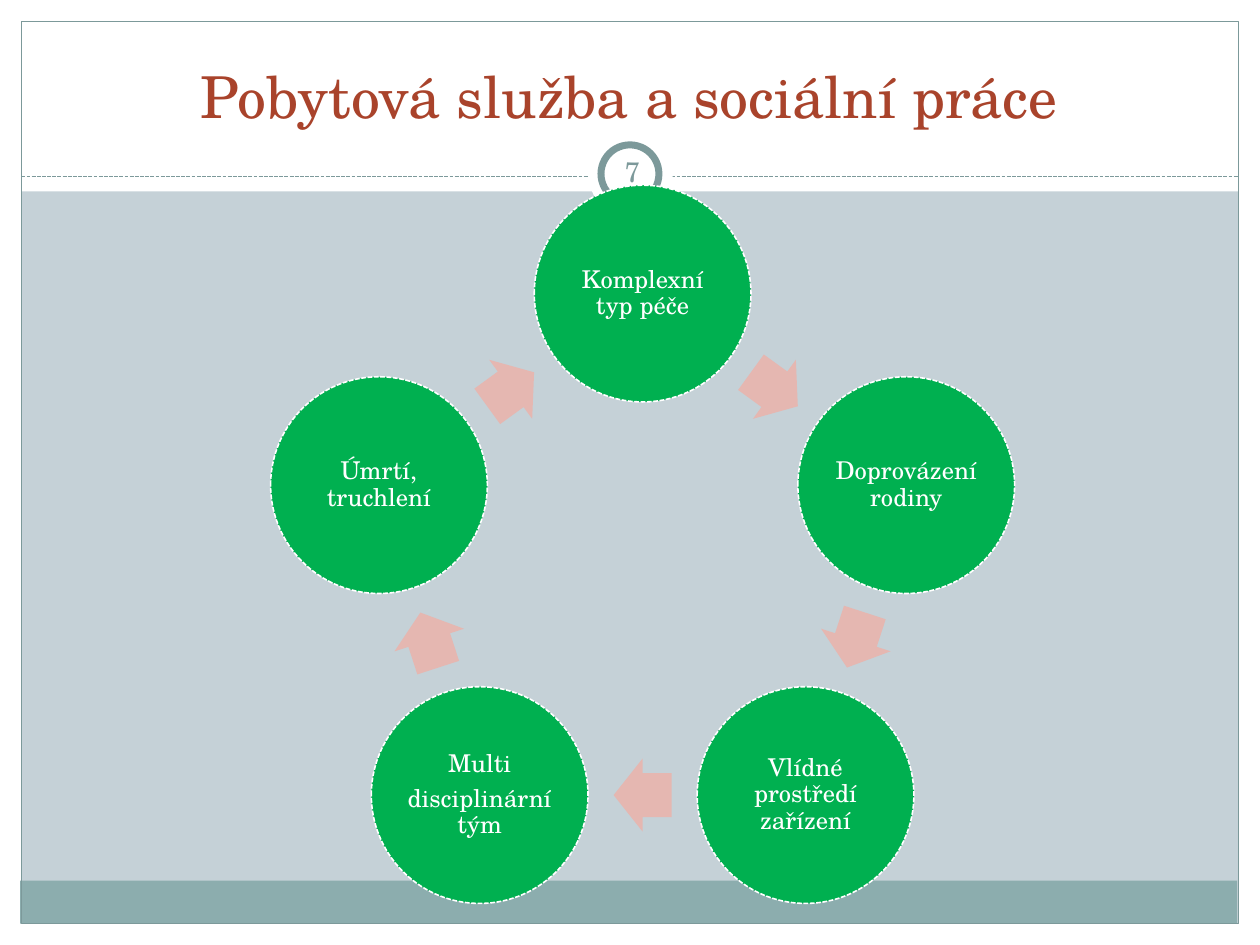
from math import cos, radians, sin
from pptx import Presentation
from pptx.dml.color import RGBColor
from pptx.enum.dml import MSO_LINE
from pptx.enum.shapes import MSO_CONNECTOR, MSO_SHAPE
from pptx.enum.text import MSO_ANCHOR, PP_ALIGN
from pptx.oxml.ns import qn
from pptx.util import Inches, Pt
from lxml import etree

RECT, OVAL, ARROW = MSO_SHAPE.RECTANGLE, MSO_SHAPE.OVAL, MSO_SHAPE.RIGHT_ARROW
DASH = MSO_LINE.SQUARE_DOT
MID, LOW = MSO_ANCHOR.MIDDLE, MSO_ANCHOR.BOTTOM
WHITE, TEAL = "FFFFFF", "7C999A"

deck = Presentation()
deck.slide_width, deck.slide_height = Inches(10), Inches(7.5)
cell = deck.slide_width / 100
slide = deck.slides.add_slide(deck.slide_layouts[5])
slide.background.fill.solid()
slide.background.fill.fore_color.rgb = RGBColor.from_string("C5D1D7")


def put(kind, x, y, w, h, fill=None, line=None, width=0.75):
    box = [round(n * cell) for n in (x, y, w, h)]
    shape = slide.shapes.add_shape(kind, *box)
    shape.shadow.inherit = False
    if fill:
        shape.fill.solid()
        shape.fill.fore_color.rgb = RGBColor.from_string(fill)
    else:
        shape.fill.background()
    if line:
        shape.line.color.rgb = RGBColor.from_string(line)
        shape.line.width = Pt(width)
    else:
        shape.line.fill.background()
    return shape


def write(shape, text, size, color, anchor, inset):
    frame = shape.text_frame
    frame.text = text
    frame.word_wrap = True
    frame.vertical_anchor = anchor
    frame.margin_left = frame.margin_right = Inches(inset)
    frame.margin_top = frame.margin_bottom = Inches(min(inset, 0.05))
    for para in frame.paragraphs:
        para.alignment = PP_ALIGN.CENTER
        para.font.name = "TeX Gyre Schola"
        para.font.size = Pt(size)
        para.font.color.rgb = RGBColor.from_string(color)
    return frame.paragraphs


edge = 1.7
put(RECT, 0, 75 - edge, 100, edge, WHITE)
put(RECT, 0, 0, 100, 15.2, WHITE)
for x in (0, 100 - edge):
    put(RECT, x, 0, edge, 75, WHITE)
put(RECT, 1.6, 69.9, 96.6, 3.4, "8CADAE")
put(RECT, edge, edge, 100 - 2 * edge, 75 - 2 * edge, None, TEAL)

ends = [round(n * cell) for n in (edge, 14, 100 - edge, 14)]
rule = slide.shapes.add_connector(MSO_CONNECTOR.STRAIGHT, *ends)
rule.line.color.rgb = RGBColor.from_string(TEAL)
rule.line.width = Pt(0.75)
rule.line.dash_style = DASH
etree.SubElement(rule._element.spPr, qn("a:effectLst"))

put(OVAL, 46.7, 10.5, 6.7, 6.7, WHITE)
put(OVAL, 47.7, 11.5, 4.6, 4.6, WHITE, TEAL, 4)

title = slide.shapes.title
title.left, title.top = round(3.3 * cell), round(2.5 * cell)
title.width, title.height = round(93.3 * cell), round(8.3 * cell)
write(title, "Pobytová služba a sociální práce", 33, "A9432B", LOW, 0.1)
rule._element.getparent().append(title._element)

box = [round(n * cell) for n in (47.7, 11.2, 5, 4.8)]
write(slide.shapes.add_textbox(*box), "7", 16, TEAL, MID, 0.05)

steps = [
    "Komplexní typ péče",
    "Doprovázení rodiny",
    "Vlídné prostředí zařízení",
    "Multi\ndisciplinární tým",
    "Úmrtí, truchlení",
]
mid_x, mid_y, reach, disc = 51, 45.3, 22, 17.2
long, wide = 4.6, 5.8
turn = 360 / len(steps)
inner = reach * cos(radians(turn / 2))
for i, step in enumerate(steps):
    angle = radians(i * turn)
    x = mid_x + reach * sin(angle)
    y = mid_y - reach * cos(angle)
    ball = put(OVAL, x - disc / 2, y - disc / 2, disc, disc, "00B050", WHITE, 0.9)
    ball.line.dash_style = DASH
    for para in write(ball, step, 14, WHITE, MID, 0.02):
        para.line_spacing = 0.9
        para.space_after = Pt(5)

    tilt = (i + 0.5) * turn
    x = mid_x + inner * sin(radians(tilt))
    y = mid_y - inner * cos(radians(tilt))
    arrow = put(ARROW, x - long / 2, y - wide / 2, long, wide, "E5B7B1")
    arrow.adjustments[0], arrow.adjustments[1] = 0.6, 0.5
    arrow.rotation = tilt

deck.save("out.pptx")
